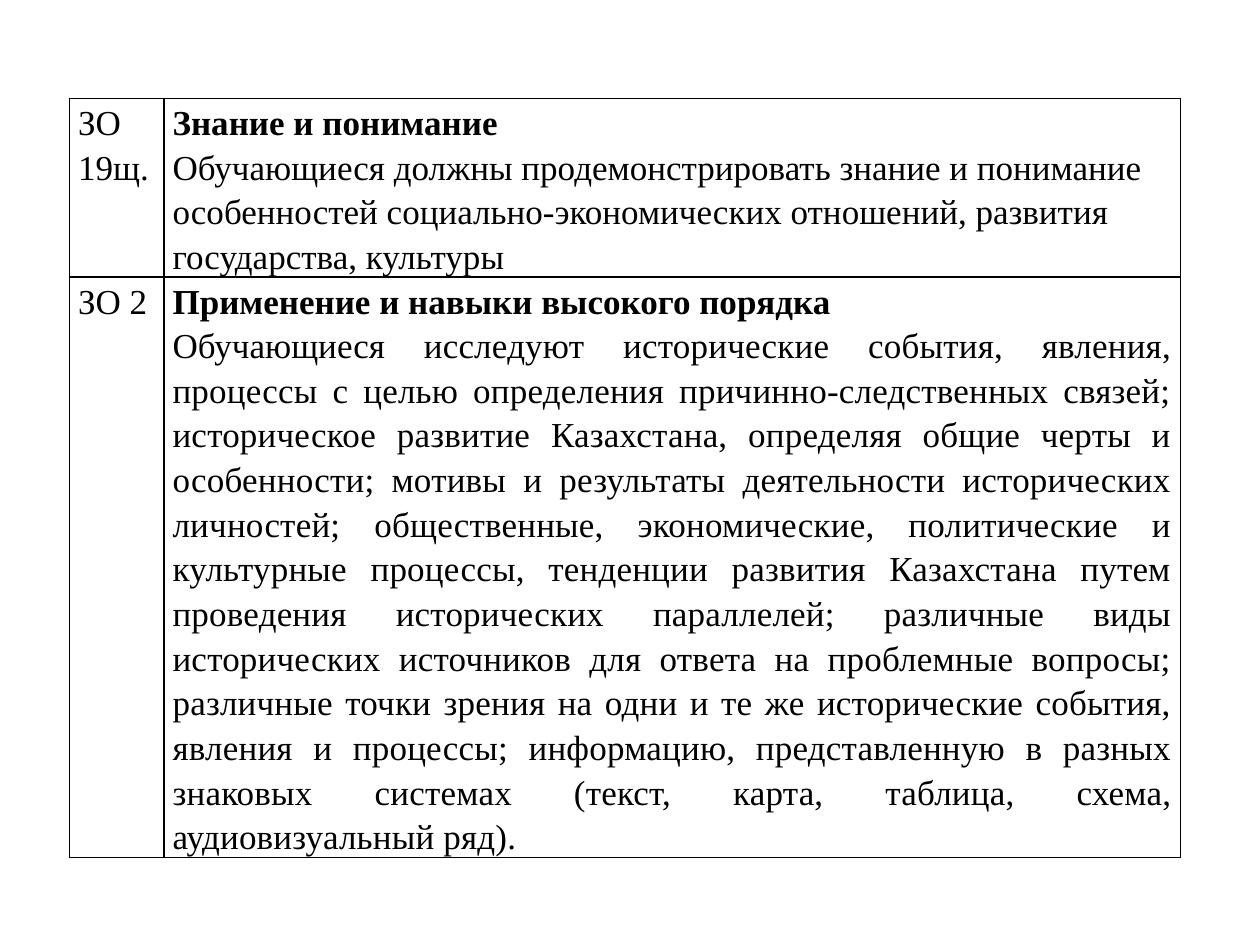
from lxml.etree import SubElement as Sub
from pptx import Presentation
from pptx.dml.color import RGBColor
from pptx.enum.text import MSO_ANCHOR, PP_ALIGN as AL
from pptx.oxml.ns import qn
from pptx.util import Inches, Pt

BLACK = RGBColor(0x00, 0x00, 0x00)
WHITE = RGBColor(0xFF, 0xFF, 0xFF)

# Each row: code, heading, runs of (text, letter spacing in pt), alignment
OUTCOMES = [
    ("ЗО 19щ.", "Знание и понимание",
     [("Обучающиеся должны продемонстрировать знание и понимание "
       "особенностей социально-экономических отношений, развития "
       "государства, культуры", 0)], AL.LEFT),
    ("ЗО 2", "Применение и навыки высокого порядка",
     [("Обучающиеся ", 0),
      ("исследуют исторические события, явления, процессы с целью "
       "определения причинно-следственных связей; историческое развитие "
       "Казахстана, определяя общие черты и особенности; мотивы и "
       "результаты деятельности исторических личностей; общественные, "
       "экономические, политические и культурные процессы, тенденции "
       "развития Казахстана путем проведения исторических параллелей; "
       "различные виды исторических источников для ответа на проблемные "
       "вопросы; различные точки зрения на одни и те же исторические "
       "события, явления и процессы; информацию, представленную в разных "
       "знаковых системах (текст, карта, таблица, схема, "
       "аудиовизуальный ряд).", 0.1)], AL.JUSTIFY),
]


class Deck:
    FONT = {"name": "Times New Roman", "size": Pt(20)}
    CELL = {"margin_left": Inches(0.07), "margin_right": Inches(0.07),
            "margin_top": 0, "margin_bottom": 0,
            "vertical_anchor": MSO_ANCHOR.TOP}

    def __init__(self, width, height):
        self.prs = Presentation()
        self.prs.slide_width, self.prs.slide_height = Inches(width), Inches(height)
        self.s = self.prs.slides.add_slide(self.prs.slide_layouts[6])

    def x(self, share):
        return int(self.prs.slide_width * share)

    def y(self, share):
        return int(self.prs.slide_height * share)

    def table(self, left, top, cols, rows):
        """Add a plain table; all lengths are shares of the slide."""
        t = self.s.shapes.add_table(
            len(rows), len(cols), self.x(left), self.y(top),
            self.x(sum(cols)), self.y(sum(rows))).table
        t.first_row = t.horz_banding = False
        for col, share in zip(t.columns, cols):
            col.width = self.x(share)
        for row, share in zip(t.rows, rows):
            row.height = self.y(share)
        return t

    def cell(self, cell, paragraphs, align):
        """Fill a cell with paragraphs, each a list of (text, spacing, bold)."""
        for name, value in self.CELL.items():
            setattr(cell, name, value)
        self.borders(cell)
        cell.fill.solid()
        cell.fill.fore_color.rgb = WHITE
        tf = cell.text_frame
        for i, runs in enumerate(paragraphs):
            p = tf.add_paragraph() if i else tf.paragraphs[0]
            p.alignment, p.line_spacing = align, 1.15
            for text, spacing, bold in runs:
                self.run(p, text, spacing, bold)

    def run(self, p, text, spacing, bold):
        r = p.add_run()
        r.text = text
        for name, value in {**self.FONT, "bold": bold}.items():
            setattr(r.font, name, value)
        r.font.color.rgb = BLACK
        if spacing:
            r._r.get_or_add_rPr().set("spc", str(round(spacing * 100)))

    def borders(self, cell):
        tc_pr = cell._tc.get_or_add_tcPr()
        for side in ("lnL", "lnR", "lnT", "lnB"):
            ln = Sub(tc_pr, qn(f"a:{side}"), w=str(Pt(1)))
            Sub(Sub(ln, qn("a:solidFill")), qn("a:srgbClr"), val=str(BLACK))


def main():
    deck = Deck(10, 7.5)

    # Learning outcomes: code on the left, description on the right
    t = deck.table(0.055, 0.78 / 7.5, cols=(0.075, 0.807),
                   rows=(1.34 / 7.5, 4.44 / 7.5))
    for i, (code, heading, body, align) in enumerate(OUTCOMES):
        deck.cell(t.cell(i, 0), [[(code, 0, False)]], AL.LEFT)
        text = [(part, spacing, False) for part, spacing in body]
        deck.cell(t.cell(i, 1), [[(heading, 0, True)], text], align)

    deck.prs.save("out.pptx")


if __name__ == "__main__":
    main()
